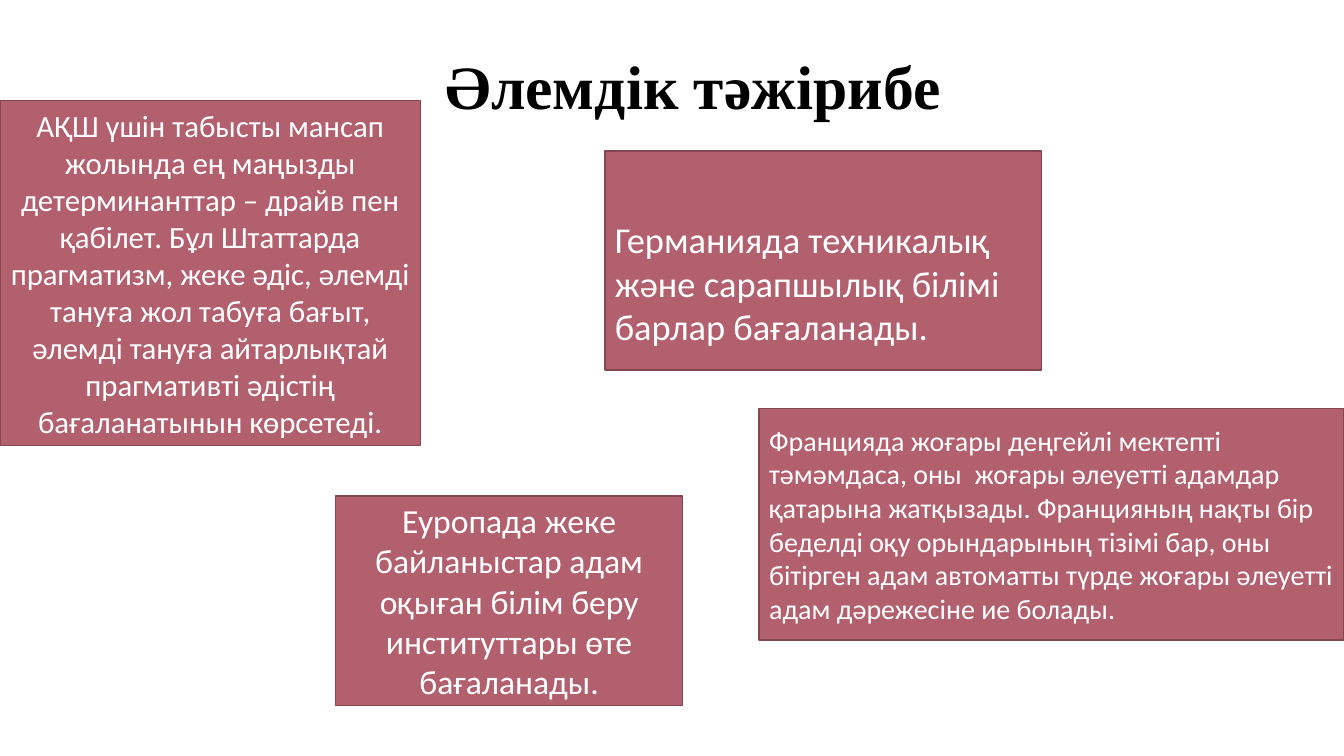
"""Builds a slide on how different countries judge career potential."""
import pptx
import pptx.dml.color
import pptx.enum.shapes
import pptx.enum.text
import pptx.util

Inches = pptx.util.Inches
Pt = pptx.util.Pt
ALIGN = pptx.enum.text.PP_ALIGN
ANCHOR = pptx.enum.text.MSO_ANCHOR

TITLE = "Әлемдік тәжірибе"
TITLE_BOX = (4.42, 0, 5.83, 1.27)
FILL, BORDER, WHITE, BLACK = "B2606E", "844751", "FFFFFF", "000000"

# box, text, size, alignment, top inset
CARDS = [
    ((0, 1, 4.17, 3.42),
     "АҚШ үшін табысты мансап жолында ең маңызды детерминанттар – драйв пен қабілет. "
     "Бұл Штаттарда прагматизм, жеке әдіс, әлемді тануға жол табуға бағыт, әлемді тануға "
     "айтарлықтай прагмативті әдістің бағаланатынын көрсетеді.",
     22, ALIGN.CENTER, 0.05),
    ((3.33, 4.92, 3.44, 2.08),
     "Еуропада жеке байланыстар адам оқыған білім беру институттары өте бағаланады.",
     24, ALIGN.CENTER, 0.05),
    ((7.53, 4.05, 5.8, 2.3),
     "Францияда жоғары деңгейлі мектепті тәмәмдаса, оны  жоғары әлеуетті адамдар қатарына "
     "жатқызады. Францияның нақты бір беделді оқу орындарының тізімі бар, оны бітірген адам "
     "автоматты түрде жоғары әлеуетті адам дәрежесіне ие болады.",
     20, ALIGN.LEFT, 0.05),
    ((6, 1.5, 4.33, 2.17),
     "Германияда техникалық және сарапшылық білімі барлар бағаланады.",
     26, ALIGN.LEFT, 0.49),
]


def rgb(value):
    return pptx.dml.color.RGBColor.from_string(value)


def write(sp, text, font, size, color, align, anchor, bold=False):
    tf = sp.text_frame
    tf.word_wrap = True
    tf.vertical_anchor = anchor
    tf.text = text
    p = tf.paragraphs[0]
    p.alignment = align
    r = p.runs[0]
    r.font.name = font
    r.font.size = Pt(size)
    r.font.bold = bold
    r.font.color.rgb = rgb(color)
    return tf


def add_title(s):
    sp = s.shapes.add_textbox(*map(Inches, TITLE_BOX))
    tf = write(sp, TITLE, "Times New Roman", 44, BLACK, ALIGN.LEFT, ANCHOR.BOTTOM, True)
    tf.margin_left = tf.margin_right = 0
    tf.paragraphs[0].line_spacing = 0.9


def add_card(s, box, text, size, align, top):
    sp = s.shapes.add_shape(pptx.enum.shapes.MSO_SHAPE.RECTANGLE, *map(Inches, box))
    sp.shadow.inherit = False
    sp.fill.solid()
    sp.fill.fore_color.rgb = rgb(FILL)
    sp.line.color.rgb = rgb(BORDER)
    sp.line.width = Pt(1)
    tf = write(sp, text, "Calibri", size, WHITE, align, ANCHOR.MIDDLE)
    tf.margin_top = Inches(top)


def main():
    prs = pptx.Presentation()
    prs.slide_width, prs.slide_height = Inches(13.33), Inches(7.5)
    s = prs.slides.add_slide(prs.slide_layouts[6])
    add_title(s)
    for card in CARDS:
        add_card(s, *card)
    prs.save("out.pptx")


if __name__ == "__main__":
    main()
